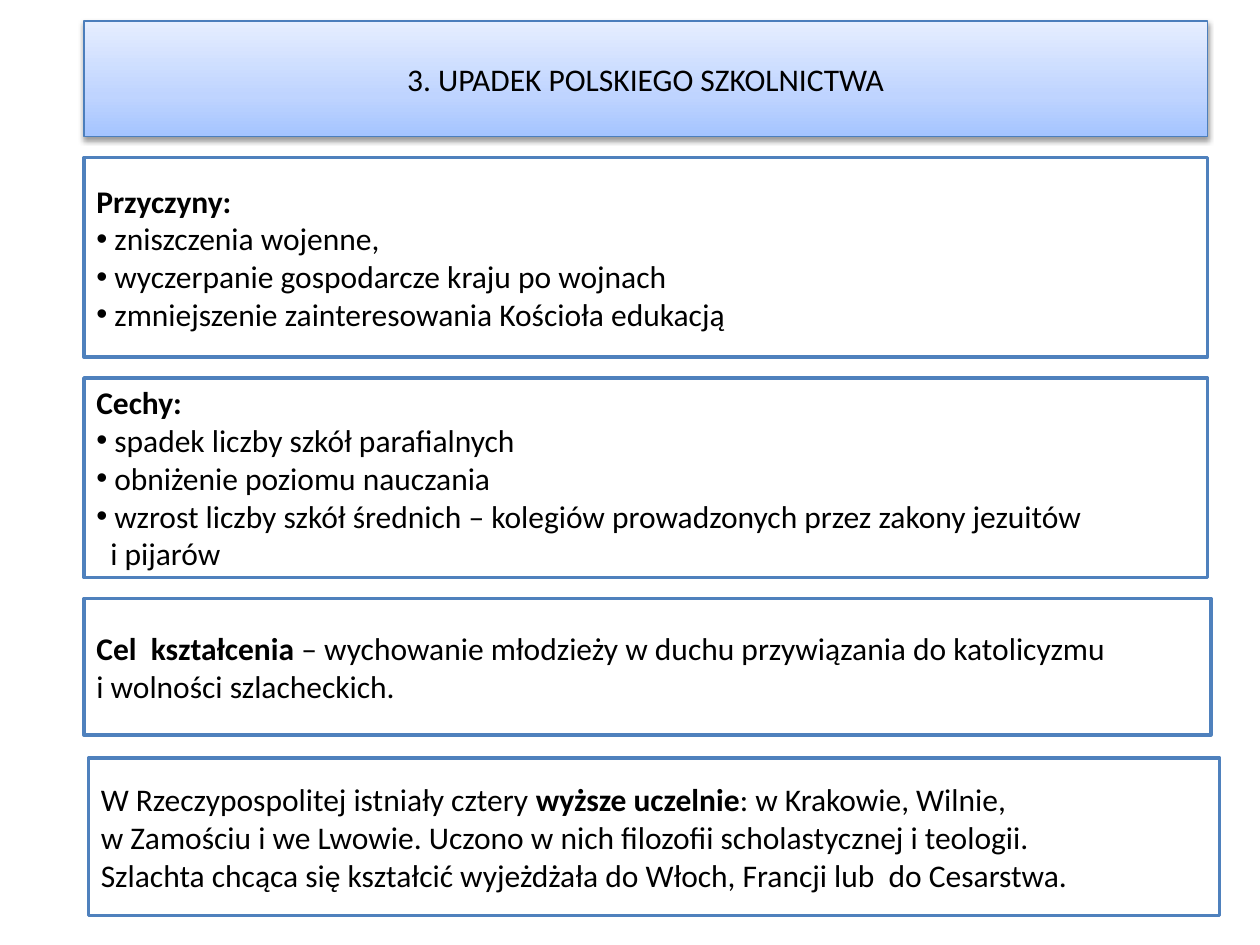
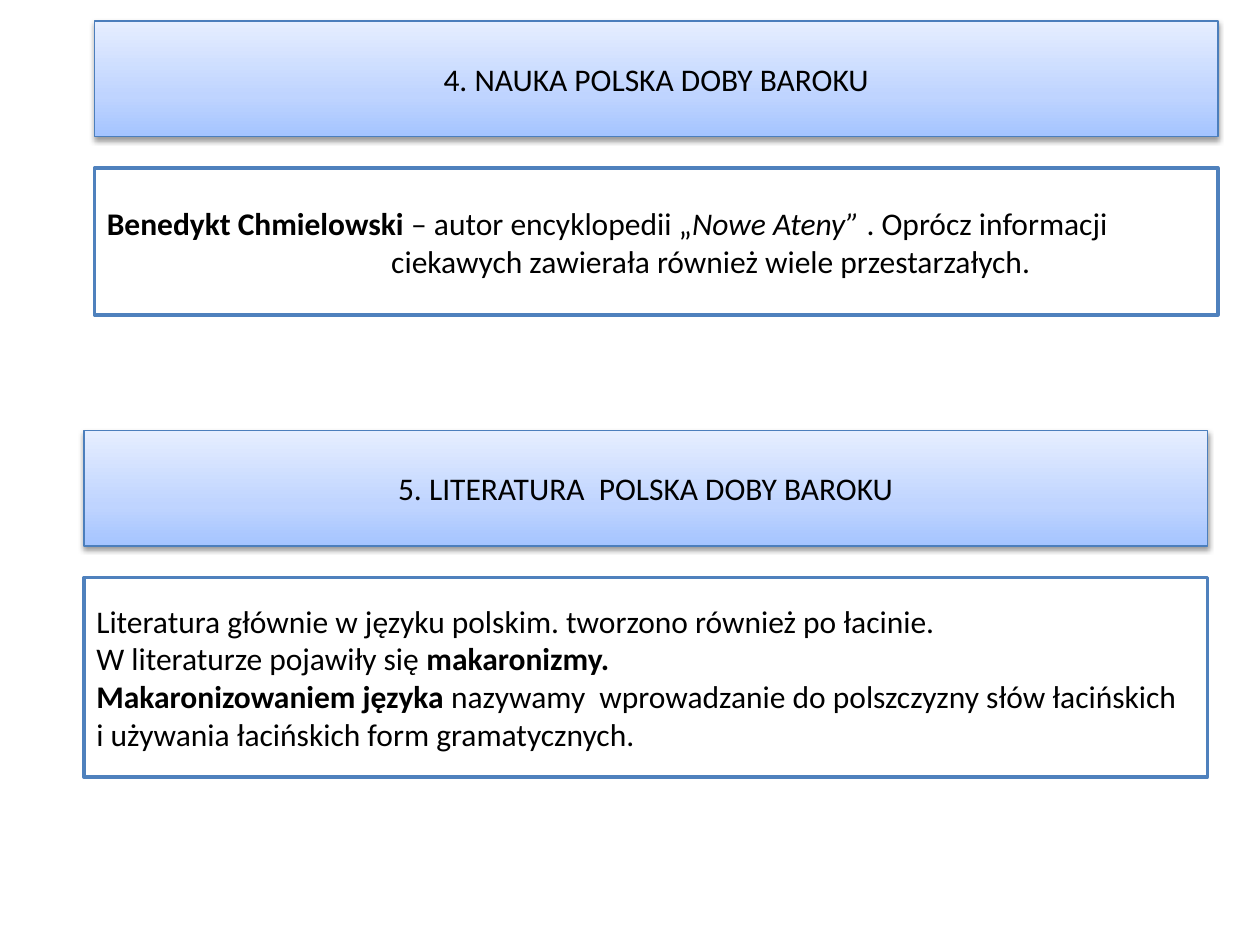
from copy import deepcopy
from dataclasses import dataclass

from lxml import etree
from pptx import Presentation
from pptx.dml.color import RGBColor
from pptx.enum import shapes, text
from pptx.oxml.ns import qn
from pptx.util import Pt


@dataclass(frozen=True)
class Theme:
    font: str = "Calibri"
    size: int = 18
    ink: str = "000000"
    paper: str = "FFFFFF"
    frame: str = "4F81BD"
    frame_width: float = 2
    band_line: str = "4B7EBC"
    band_line_width: float = 0.75
    band_stops: tuple = ((0, "A4C4FF"), (0.35, "BFD4FF"), (1, "E6EEFF"))
    bullet_indent: float = 10.3


T = Theme()
LEFT, WIDTH = 48, 642
TOP, BAND_HEIGHT = 12, 66


def add_box(s, x, y, w, h, lines, align=text.PP_ALIGN.LEFT):
    """Add a framed box; a line is (kind or left indent, runs), a run is (text, style)."""
    sp = s.shapes.add_shape(shapes.MSO_SHAPE.RECTANGLE, Pt(x), Pt(y), Pt(w), Pt(h))
    sp.shadow.inherit = False
    sp.fill.solid()
    sp.fill.fore_color.rgb = RGBColor.from_string(T.paper)
    sp.line.color.rgb = RGBColor.from_string(T.frame)
    sp.line.width = Pt(T.frame_width)
    tf = sp.text_frame
    tf.word_wrap = True
    tf.vertical_anchor = text.MSO_ANCHOR.MIDDLE
    for i, (kind, runs) in enumerate(lines):
        p = tf.add_paragraph() if i else tf.paragraphs[0]
        p.alignment = align
        p.font.name, p.font.size = T.font, Pt(T.size)
        p.font.color.rgb = RGBColor.from_string(T.ink)
        pPr = p._p.get_or_add_pPr()
        if kind == "bullet":
            pPr.set("marL", str(Pt(T.bullet_indent)))
            pPr.set("indent", str(-Pt(T.bullet_indent)))
            bullet_font = etree.Element(qn("a:buFont"), typeface="Arial")
            bullet = etree.Element(qn("a:buChar"), char="•")
            pPr.insert(0, bullet_font)
            pPr.insert(1, bullet)
        elif kind:
            pPr.set("marL", str(Pt(kind)))
        for words, style in runs:
            r = p.add_run()
            r.text = words
            if style == "b":
                r.font.bold = True
            elif style == "i":
                r.font.italic = True
    return sp


def add_band(s, x, y, title):
    """Add a heading band with a gradient and a soft shadow."""
    sp = add_box(s, x, y, WIDTH, BAND_HEIGHT, [(0, [(title, "")])], text.PP_ALIGN.CENTER)
    sp.line.color.rgb = RGBColor.from_string(T.band_line)
    sp.line.width = Pt(T.band_line_width)
    sp.fill.gradient()
    sp.fill.gradient_angle = 90
    spPr = sp._element.spPr
    stop_list = spPr.find(qn("a:gradFill")).find(qn("a:gsLst"))
    stop_list.append(deepcopy(stop_list[-1]))
    for stop, (position, colour) in zip(sp.fill.gradient_stops, T.band_stops):
        stop.position = position
        stop.color.rgb = RGBColor.from_string(colour)
    shadow = etree.SubElement(
        spPr.find(qn("a:effectLst")), qn("a:outerShdw"), blurRad=str(Pt(3.1)),
        dist=str(Pt(1.6)), dir="5400000", rotWithShape="0")
    colour = etree.SubElement(shadow, qn("a:srgbClr"), val=T.ink)
    etree.SubElement(colour, qn("a:alpha"), val="38000")


prs = Presentation()
prs.slide_width, prs.slide_height = Pt(720), Pt(540)
blank = prs.slide_layouts[6]

# Slide 1: decline of schooling
s = prs.slides.add_slide(blank)
add_band(s, LEFT, TOP, "3. UPADEK POLSKIEGO SZKOLNICTWA")
causes = [
    (0, [("Przyczyny:", "b")]),
    ("bullet", [("zniszczenia wojenne,", "")]),
    ("bullet", [("wyczerpanie gospodarcze kraju po wojnach", "")]),
    ("bullet", [("zmniejszenie zainteresowania Kościoła edukacją", "")]),
]
features = [
    (0, [("Cechy:", "b")]),
    ("bullet", [("spadek liczby szkół parafialnych", "")]),
    ("bullet", [("obniżenie poziomu nauczania", "")]),
    ("bullet", [("wzrost liczby szkół średnich – kolegiów prowadzonych przez zakony jezuitów", "")]),
    (8, [("i pijarów", "")]),
]
aim = [
    (0, [("Cel  kształcenia ", "b"),
         ("– wychowanie młodzieży w duchu przywiązania do katolicyzmu", "")]),
    (0, [("i wolności szlacheckich.", "")]),
]
universities = [
    (0, [("W Rzeczypospolitej istniały cztery ", ""), ("wyższe uczelnie", "b"),
         (": w Krakowie, Wilnie,", "")]),
    (0, [("w Zamościu i we Lwowie. Uczono w nich filozofii scholastycznej i teologii.", "")]),
    (0, [("Szlachta chcąca się kształcić wyjeżdżała do Włoch, Francji lub  do Cesarstwa.", "")]),
]
for x, y, w, h, lines in (
    (LEFT, 90, WIDTH, 114, causes),
    (LEFT, 216, WIDTH, 114, features),
    (LEFT, 342, 644, 78, aim),
    (50.5, 433.25, 646.5, 90, universities),
):
    add_box(s, x, y, w, h, lines)

# Slide 2: science and literature
s = prs.slides.add_slide(blank)
author = [
    (0, [("Benedykt Chmielowski ", "b"), ("– autor encyklopedii „", ""),
         ("Nowe Ateny”", "i"), (" . Oprócz informacji", "")]),
    (162.5, [("ciekawych zawierała również wiele przestarzałych.", "")]),
]
literature = [
    (0, [("Literatura głównie w języku polskim. tworzono również po łacinie.", "")]),
    (0, [("W literaturze pojawiły się ", ""), ("makaronizmy.", "b")]),
    (0, [("Makaronizowaniem języka ", "b"),
         ("nazywamy  wprowadzanie do polszczyzny słów łacińskich", "")]),
    (0, [("i używania łacińskich form gramatycznych.", "")]),
]
for x, y, title, body_height, lines in (
    (54, TOP, "4. NAUKA POLSKA DOBY BAROKU", 84, author),
    (LEFT, 246, "5. LITERATURA  POLSKA DOBY BAROKU", 114, literature),
):
    add_band(s, x, y, title)
    add_box(s, x, y + BAND_HEIGHT + 18, WIDTH, body_height, lines)

prs.save("out.pptx")
